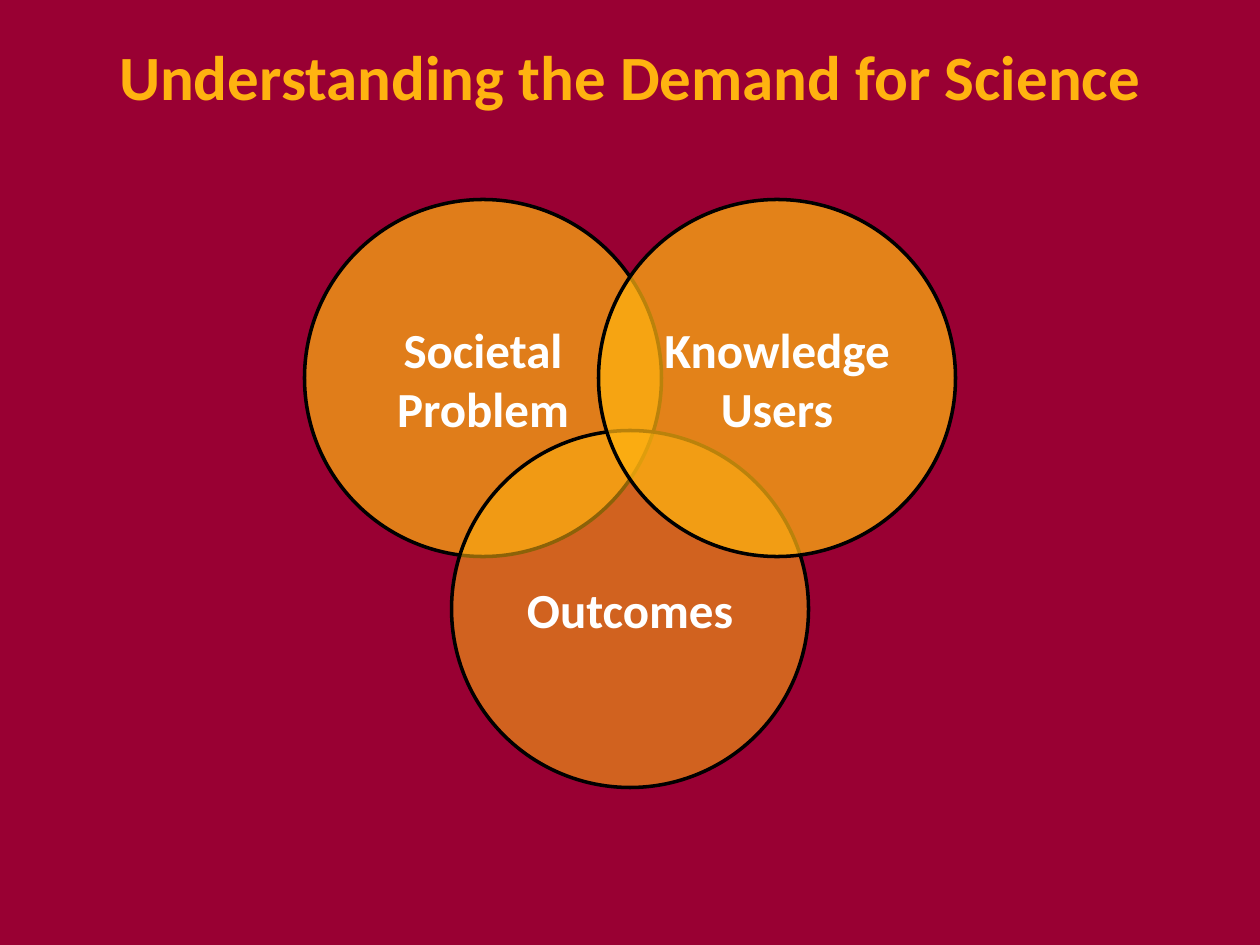
import pptx
import pptx.dml.color
import pptx.enum.shapes
import pptx.enum.text
import pptx.oxml.ns
import pptx.util
from lxml import etree

Pt = pptx.util.Pt
RGBColor = pptx.dml.color.RGBColor
MAROON = RGBColor(0x99, 0x00, 0x33)
GOLD = RGBColor(0xFF, 0xB3, 0x10)
WHITE = RGBColor(0xFF, 0xFF, 0xFF)
BLACK = RGBColor(0x00, 0x00, 0x00)


class VennSlide:
    """A slide with a title and overlapping translucent circles."""

    font_name = "Calibri"
    diameter = 204

    def __init__(self, slide):
        self.slide = slide
        slide.background.fill.solid()
        slide.background.fill.fore_color.rgb = MAROON

    def label(self, frame, wording, size, color, anchor):
        frame.text = wording
        frame.word_wrap = True
        frame.vertical_anchor = anchor
        paragraph = frame.paragraphs[0]
        paragraph.alignment = pptx.enum.text.PP_ALIGN.CENTER
        font = paragraph.runs[0].font
        font.name, font.size, font.bold = self.font_name, Pt(size), True
        font.color.rgb = color

    def title(self, wording):
        heading = self.slide.shapes.title
        heading.left, heading.top = Pt(36), Pt(18)
        heading.width, heading.height = Pt(648), Pt(51)
        self.label(heading.text_frame, wording, 36, GOLD,
                   pptx.enum.text.MSO_ANCHOR.TOP)
        heading.text_frame.auto_size = pptx.enum.text.MSO_AUTO_SIZE.SHAPE_TO_FIT_TEXT

    def circle(self, wording, left, top, opacity):
        circle = self.slide.shapes.add_shape(
            pptx.enum.shapes.MSO_SHAPE.OVAL,
            Pt(left), Pt(top), Pt(self.diameter), Pt(self.diameter))
        circle.shadow.inherit = False
        circle.fill.solid()
        circle.fill.fore_color.rgb = GOLD
        qn = pptx.oxml.ns.qn
        properties = circle.element.spPr
        tint = properties.find(qn("a:solidFill")).find(qn("a:srgbClr"))
        etree.SubElement(tint, qn("a:alpha")).set("val", str(opacity * 1000))
        circle.line.color.rgb = BLACK
        circle.line.width = Pt(2)
        frame = circle.text_frame
        frame.margin_left = frame.margin_right = 0
        self.label(frame, wording, 28, WHITE, pptx.enum.text.MSO_ANCHOR.MIDDLE)


def main():
    deck = pptx.Presentation()
    deck.slide_width, deck.slide_height = Pt(720), Pt(540)
    venn = VennSlide(deck.slides.add_slide(deck.slide_layouts[5]))
    venn.title("Understanding the Demand for Science")

    left, top, across, down = 174, 114, 84, 132
    venn.circle("Societal Problem", left, top, 70)
    venn.circle("Outcomes", left + across, top + down, 55)
    venn.circle("Knowledge Users", left + 2 * across, top, 73)
    deck.save("out.pptx")


if __name__ == "__main__":
    main()
